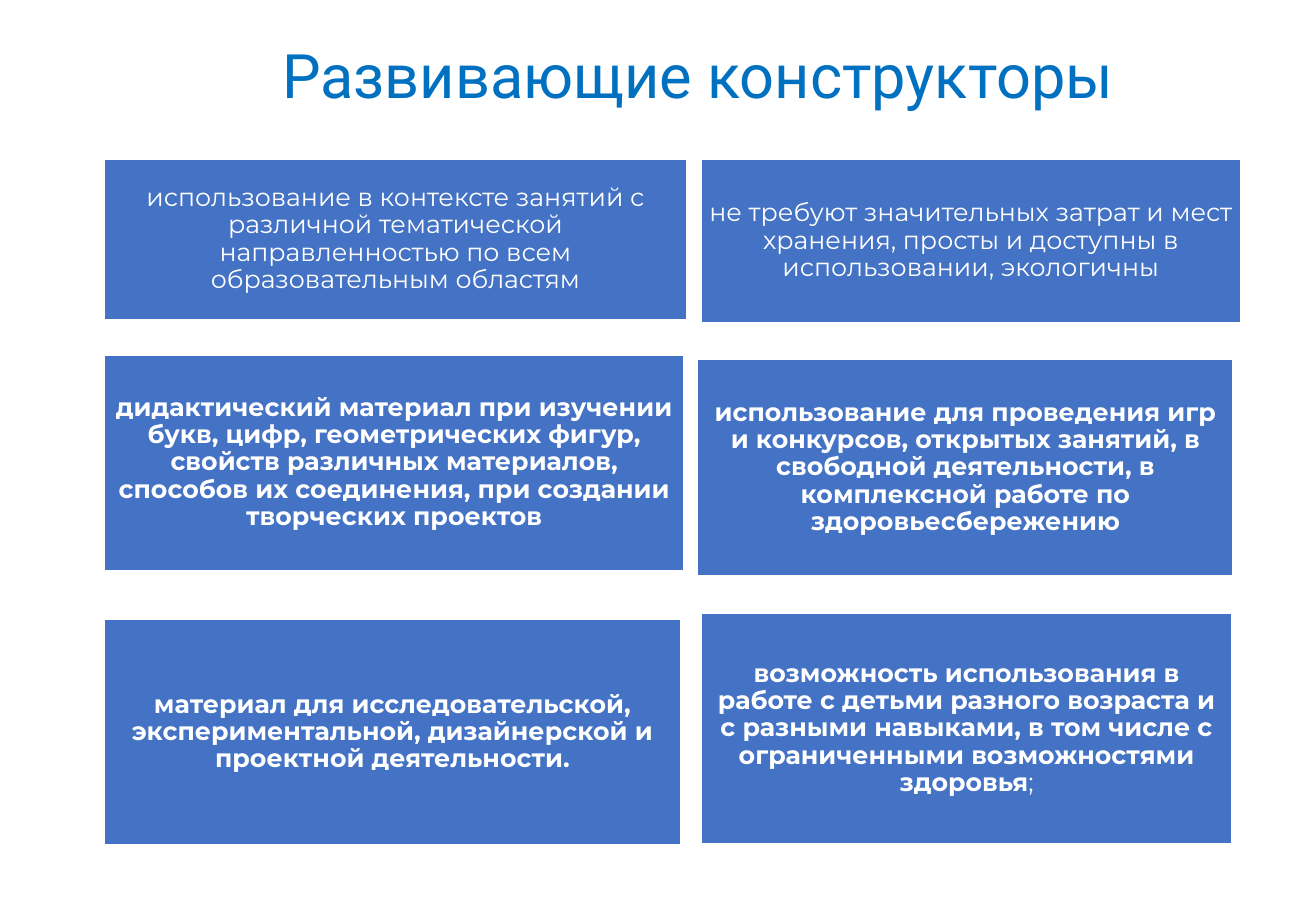
from pptx import Presentation
from pptx.dml.color import RGBColor
from pptx.enum.shapes import MSO_SHAPE
from pptx.enum.text import MSO_ANCHOR, MSO_AUTO_SIZE, PP_ALIGN
from pptx.util import Inches, Pt

TITLE_BLUE = RGBColor(0x00, 0x70, 0xC0)
CARD_BLUE = RGBColor(0x44, 0x72, 0xC4)
WHITE = RGBColor(0xFF, 0xFF, 0xFF)

# Left, top, width, height, bold, text, plain ending
CARDS = [
    (0.86, 1.31, 4.79, 1.32, False,
     "использование в контексте занятий с различной тематической "
     "направленностью по всем образовательным областям", ""),
    (5.77, 1.31, 4.44, 1.35, False,
     "не требуют значительных затрат и мест хранения, просты и доступны "
     "в использовании, экологичны", ""),
    (0.86, 2.92, 4.77, 1.78, True,
     "дидактический материал при изучении букв, цифр, геометрических фигур, "
     "свойств различных материалов, способов их соединения, при создании "
     "творческих проектов", ""),
    (5.74, 2.96, 4.41, 1.78, True,
     "использование для проведения игр и конкурсов, открытых занятий, "
     "в свободной деятельности, в комплексной работе по здоровьесбережению", ""),
    (0.86, 5.1, 4.74, 1.86, True,
     "материал для исследовательской, экспериментальной, дизайнерской "
     "и проектной деятельности.", ""),
    (5.77, 5.05, 4.37, 1.9, True,
     "возможность использования в работе с детьми разного возраста "
     "и с разными навыками, в том числе с ограниченными возможностями "
     "здоровья", ";"),
]


class SlideBuilder:
    """Holds the fonts and the current slide."""

    title_font = "Roboto"
    card_font = "Montserrat"

    def __init__(self, page):
        self.page = page

    def style_span(self, span, name, size, color, bold=False):
        span.font.name = name
        span.font.size = Pt(size)
        span.font.color.rgb = color
        span.font.bold = bold

    def center(self, frame):
        frame.word_wrap = True
        frame.auto_size = MSO_AUTO_SIZE.NONE
        frame.vertical_anchor = MSO_ANCHOR.MIDDLE
        para = frame.paragraphs[0]
        para.alignment = PP_ALIGN.CENTER
        para.line_spacing = 0.9
        return para

    def title(self, text, left, top, width, height):
        box = self.page.shapes.title
        box.left, box.top = Inches(left), Inches(top)
        box.width, box.height = Inches(width), Inches(height)
        box.text_frame.text = text
        para = self.center(box.text_frame)
        self.style_span(para.runs[0], self.title_font, 36.3, TITLE_BLUE)

    def card(self, left, top, width, height, bold, text, ending):
        box = self.page.shapes.add_shape(
            MSO_SHAPE.RECTANGLE,
            Inches(left), Inches(top), Inches(width), Inches(height))
        box.shadow.inherit = False
        box.fill.solid()
        box.fill.fore_color.rgb = CARD_BLUE
        box.line.color.rgb = WHITE
        box.line.width = Pt(1)
        frame = box.text_frame
        frame.margin_left = frame.margin_right = Inches(0.06)
        frame.margin_top = frame.margin_bottom = Inches(0.06)
        frame.text = text
        para = self.center(frame)
        para.space_after = Pt(5.25)
        self.style_span(para.runs[0], self.card_font, 15, WHITE, bold)
        if ending:
            span = para.add_run()
            span.text = ending
            self.style_span(span, self.card_font, 15, WHITE)


def main():
    deck = Presentation()
    deck.slide_width, deck.slide_height = Inches(10.83), Inches(7.5)
    builder = SlideBuilder(deck.slides.add_slide(deck.slide_layouts[5]))

    # Heading
    builder.title("Развивающие конструкторы", 1.1, 0.3, 9.29, 0.7)

    # Cards in two columns
    for card in CARDS:
        builder.card(*card)

    deck.save("out.pptx")


if __name__ == "__main__":
    main()
